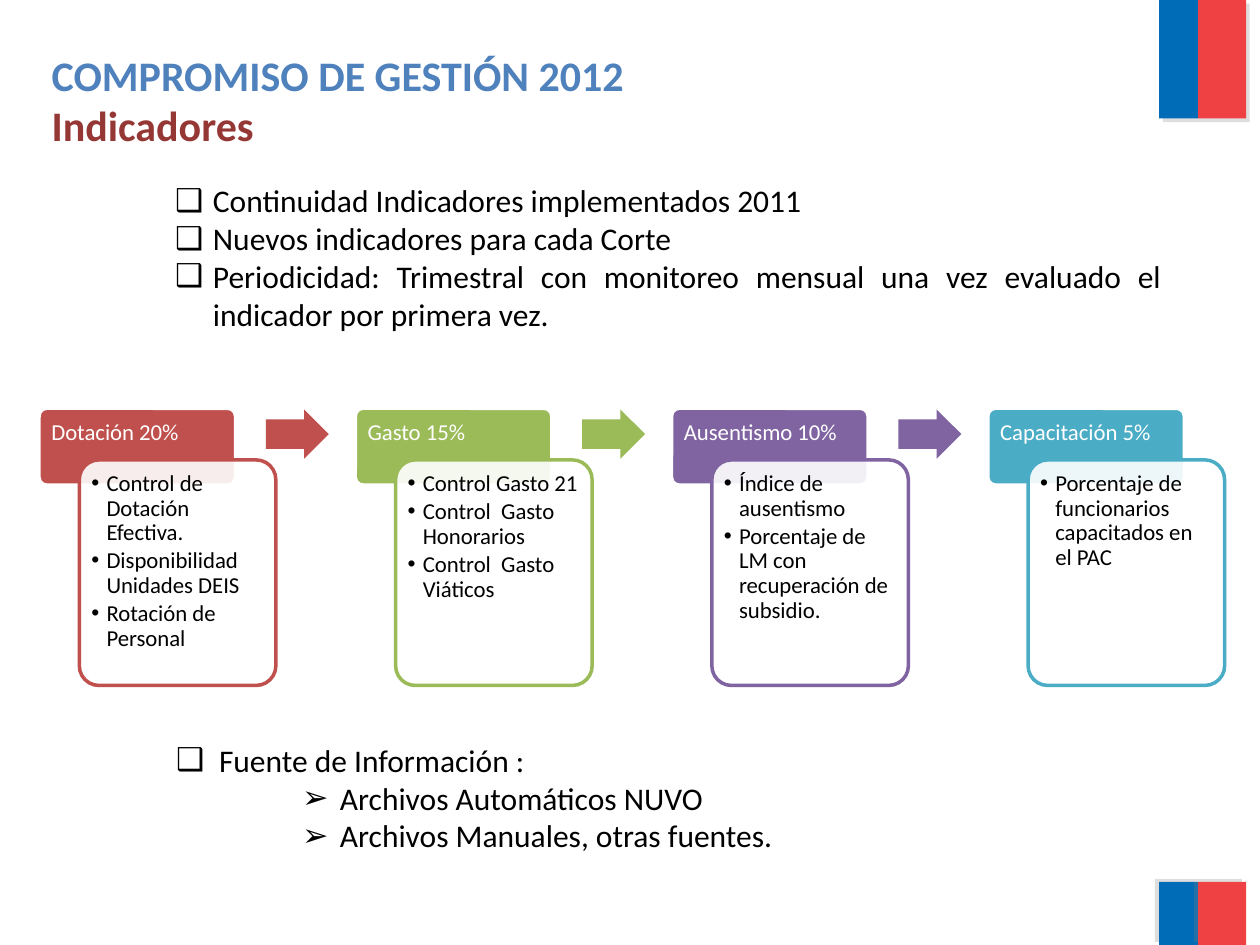
from lxml import etree
from pptx import Presentation
from pptx.dml.color import RGBColor
from pptx.enum.shapes import MSO_SHAPE as Shape
from pptx.enum.text import MSO_ANCHOR as Anchor, MSO_AUTO_SIZE as AutoSize, PP_ALIGN as Align
from pptx.oxml.ns import qn
from pptx.util import Inches, Pt

BLACK, WHITE = "000000", "FFFFFF"
STEP = 2.51
CARDS = [
    ("Dotación 20%", "C0504D",
     ["Control de Dotación Efectiva.", "Disponibilidad Unidades DEIS", "Rotación de Personal"]),
    ("Gasto 15%", "9BBB59",
     ["Control Gasto 21", "Control  Gasto Honorarios", "Control  Gasto Viáticos"]),
    ("Ausentismo 10%", "8064A2",
     ["Índice de ausentismo", "Porcentaje de LM con recuperación de subsidio."]),
    ("Capacitación 5%", "4BACC6",
     ["Porcentaje de funcionarios capacitados en el PAC"]),
]


def rgb(value):
    return RGBColor.from_string(value)


def place(sp, x, y, w, h):
    sp.left, sp.top, sp.width, sp.height = (Inches(v) for v in (x, y, w, h))


def add_shape(s, kind, box, fill, line=None, adj=()):
    sp = s.shapes.add_shape(kind, *(Inches(v) for v in box))
    sp.shadow.inherit = False
    sp.fill.solid()
    sp.fill.fore_color.rgb = rgb(fill)
    if line:
        sp.line.color.rgb = rgb(line)
        sp.line.width = Pt(2)
    else:
        sp.line.fill.background()
    for i, value in enumerate(adj):
        sp.adjustments[i] = value
    return sp


def set_alpha(parent, percent):
    color = parent.find(".//" + qn("a:srgbClr"))
    etree.SubElement(color, qn("a:alpha"), val=str(percent * 1000))


def add_shadow(sp, angle):
    effects = sp._element.spPr.find(qn("a:effectLst"))
    shadow = etree.SubElement(effects, qn("a:outerShdw"), dist=str(Pt(3)),
                              dir=str(angle * 60000), algn="ctr", rotWithShape="0")
    etree.SubElement(shadow, qn("a:srgbClr"), val="808080")
    set_alpha(effects, 25)


def setup_frame(tf, margins=(0.1, 0.05, 0.1, 0.05)):
    tf.word_wrap = True
    tf.auto_size = AutoSize.NONE
    tf.vertical_anchor = Anchor.TOP
    tf.margin_left, tf.margin_top, tf.margin_right, tf.margin_bottom = (
        Inches(v) for v in margins)


def format_text(p, size, color, bold=False, align=Align.LEFT, spacing=1.0, after=0):
    p.alignment = align
    p.line_spacing = spacing
    p.space_before, p.space_after = Pt(0), Pt(after)
    for r in p.runs:
        r.font.name = "Calibri"
        r.font.size = Pt(size)
        r.font.bold = bold
        r.font.color.rgb = rgb(color)


def set_bullet(p, char, margin, hang):
    pPr = p._p.get_or_add_pPr()
    pPr.set("marL", str(Inches(margin)))
    pPr.set("indent", str(Inches(-hang)))
    etree.SubElement(pPr, qn("a:buFont"), typeface="Arial")
    etree.SubElement(pPr, qn("a:buChar"), char=char)


def add_flag(s, x, y, h, angle):
    for dx, w, color in ((0, 0.31, "006CB7"), (0.31, 0.38, "EF4144")):
        add_shadow(add_shape(s, Shape.RECTANGLE, (x + dx, y, w, h), color), angle)


def fill_title(sp, x, y, w, h):
    place(sp, x, y, w, h)
    tf = sp.text_frame
    tf.text = "COMPROMISO DE GESTIÓN 2012\nIndicadores"
    setup_frame(tf)
    for p, color in zip(tf.paragraphs, ("4F81BD", "953735")):
        format_text(p, 24, color, bold=True)


def fill_list(sp, box, items):
    place(sp, *box)
    tf = sp.text_frame
    tf.text = "\n".join(text for text, *_ in items)
    setup_frame(tf)
    for p, (_, char, margin, hang) in zip(tf.paragraphs, items):
        format_text(p, 18, BLACK, align=Align.JUSTIFY)
        set_bullet(p, char, margin, hang)


def add_card(s, x, y, title, color, items):
    head = add_shape(s, Shape.ROUNDED_RECTANGLE, (x, y, 1.56, 0.61), color, WHITE, [0.1])
    tf = head.text_frame
    tf.text = title
    setup_frame(tf, (0.08, 0.08, 0.08, 0.05))
    format_text(tf.paragraphs[0], 13, WHITE, spacing=0.9)

    body = add_shape(s, Shape.ROUNDED_RECTANGLE, (x + 0.32, y + 0.41, 1.56, 1.79),
                     WHITE, color, [0.1])
    set_alpha(body._element.spPr.find(qn("a:solidFill")), 90)
    tf = body.text_frame
    tf.text = "\n".join(items)
    setup_frame(tf, (0.05, 0.05, 0.05, 0.05))
    for p in tf.paragraphs:
        format_text(p, 13, BLACK, spacing=0.9, after=2)
        set_bullet(p, "•", 0.12, 0.12)


def add_process(s, x, y):
    for i, (title, color, items) in enumerate(CARDS):
        left = x + i * STEP
        add_card(s, left, y, title, color, items)
        if i < len(CARDS) - 1:
            add_shape(s, Shape.RIGHT_ARROW, (left + 1.8, y + 0.01, 0.5, 0.39),
                      color, adj=[0.6, 0.5])


def main():
    prs = Presentation()
    prs.slide_width, prs.slide_height = Inches(10), Inches(7.5)
    s = prs.slides.add_slide(prs.slide_layouts[1])
    add_flag(s, 9.2, 0, 0.94, 45)
    add_flag(s, 9.2, 7, 0.5, 215)
    fill_title(s.shapes.title, 0.31, 0.34, 8.8, 0.91)
    fill_list(s.placeholders[1], (0.29, 1.39, 9.03, 1.62), [
        ("Continuidad Indicadores implementados 2011", "❑", 1.3, 0.3),
        ("Nuevos indicadores para cada Corte", "❑", 1.3, 0.3),
        ("Periodicidad: Trimestral con monitoreo mensual una vez evaluado "
         "el indicador por primera vez.", "❑", 1.3, 0.3),
    ])
    add_process(s, 0.31, 3.24)
    sources = s.shapes.add_textbox(0, 0, 0, 0)
    fill_list(sources, (1.3, 5.83, 7.17, 1.05), [
        ("Fuente de Información :", "❑", 0.34, 0.34),
        ("Archivos Automáticos NUVO", "➢", 1.3, 0.3),
        ("Archivos Manuales, otras fuentes.", "➢", 1.3, 0.3),
    ])
    prs.save("out.pptx")


if __name__ == "__main__":
    main()
